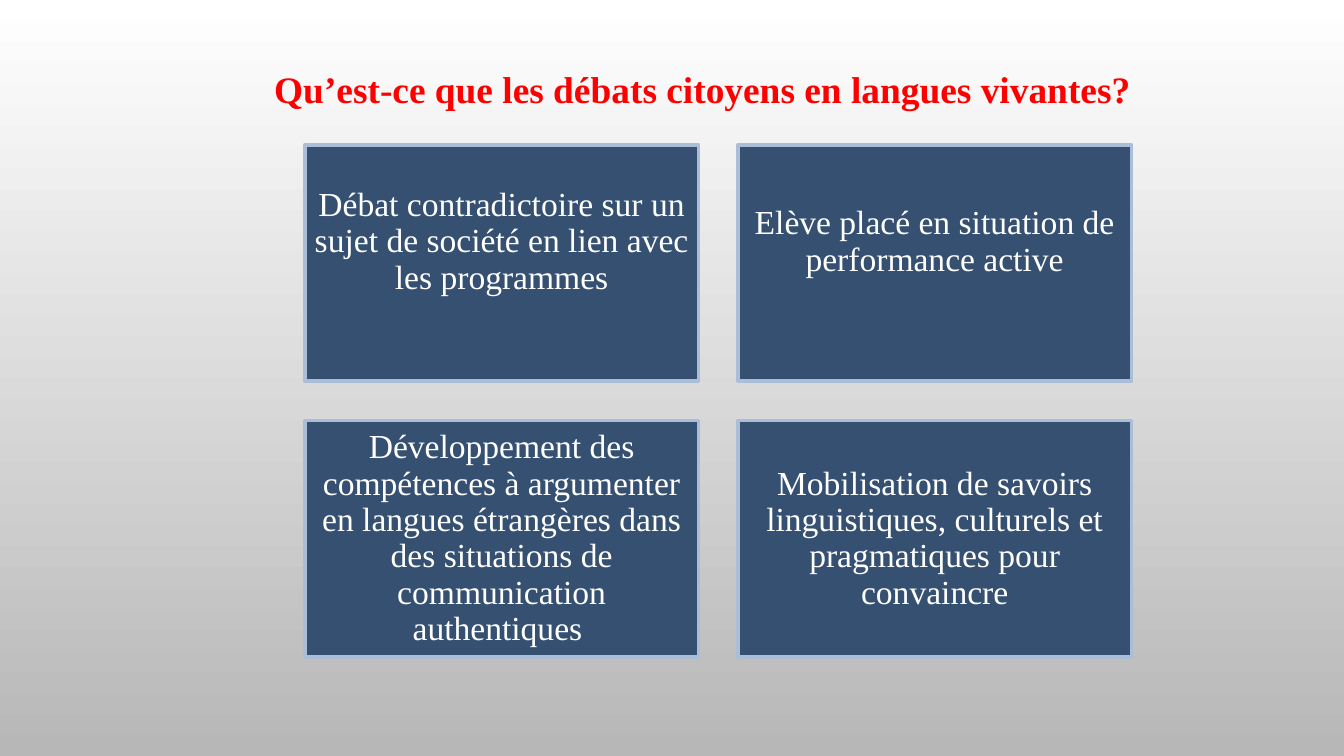
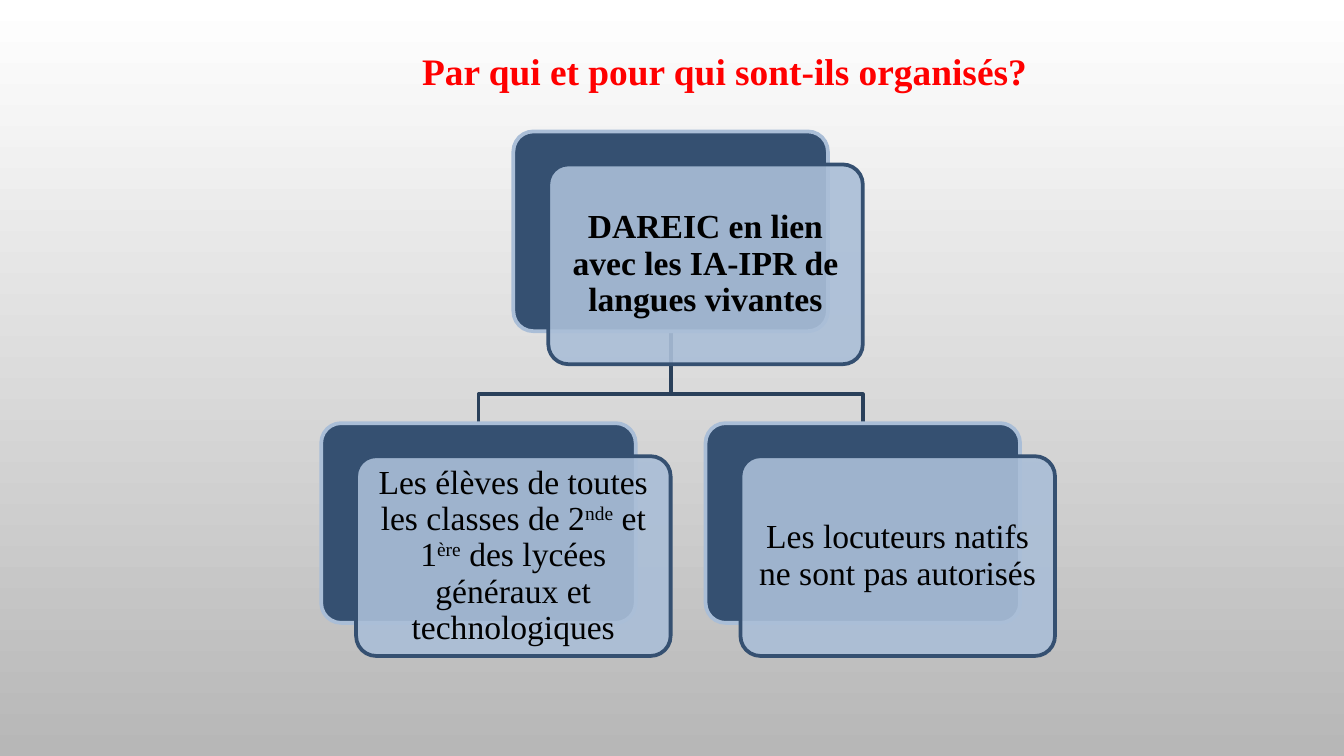
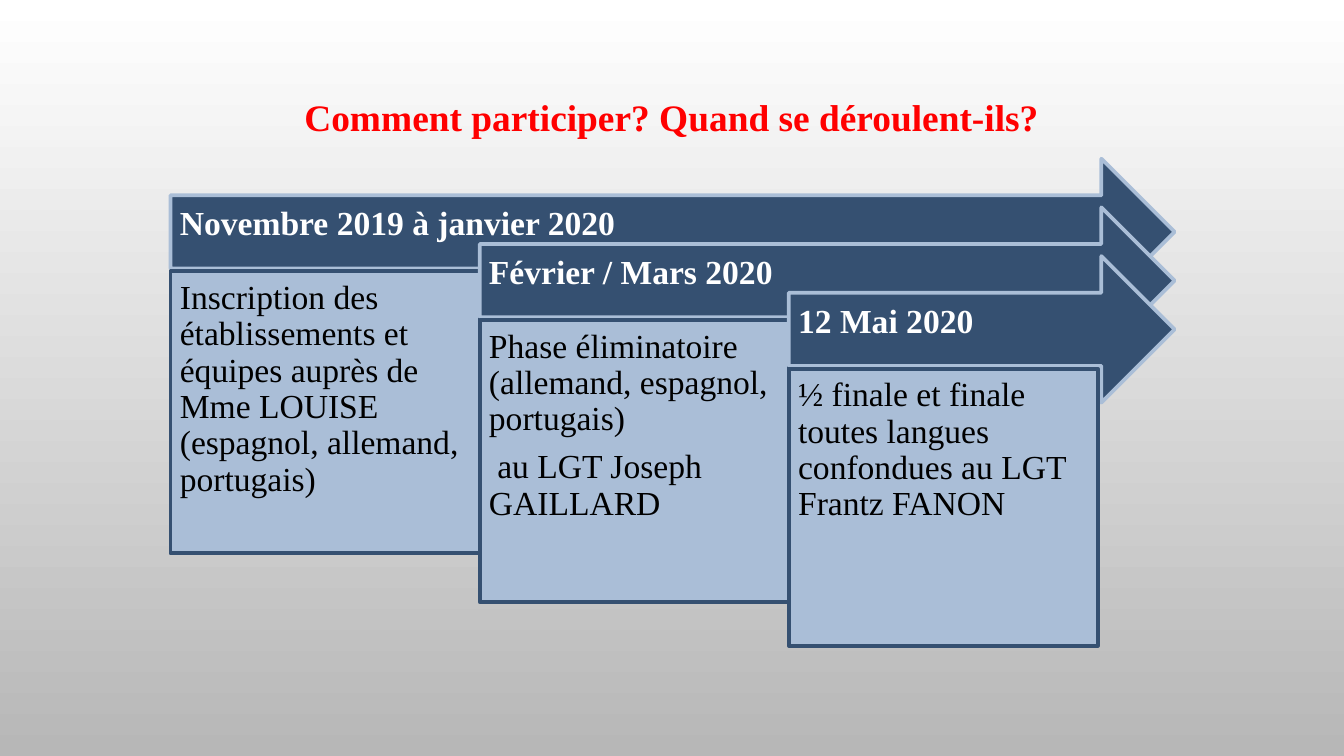
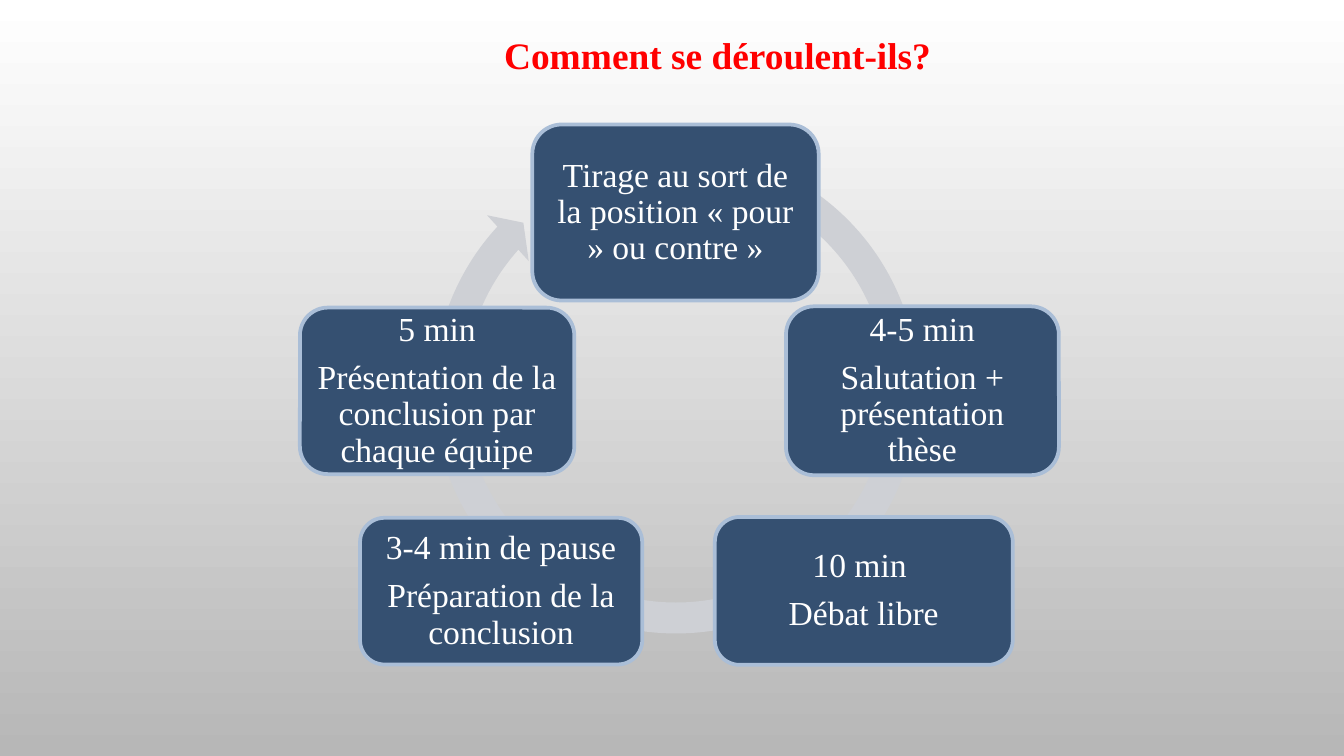
from dataclasses import dataclass

from lxml import etree
from pptx import Presentation
from pptx.dml.color import RGBColor
from pptx.enum import shapes as es, text as et
from pptx.oxml import ns
from pptx.util import Pt

KIND = es.MSO_SHAPE
ALIGN = et.PP_ALIGN
ANCHOR = et.MSO_ANCHOR


@dataclass(frozen=True)
class Theme:
    """Colours, font and sizes that all slides share."""
    font: str = "Times New Roman"
    head: int = 20
    body: int = 18
    gap: float = 6.3
    lead: float = 0.9
    pad: float = 5
    rule: float = 2
    red: str = "FF0000"
    navy: str = "355071"
    pale: str = "AABED7"
    dark: str = "2A405A"
    ring: str = "CED0D5"
    white: str = "FFFFFF"
    black: str = "000000"
    grey: str = "B7B7B7"


T = Theme()


def rgb(code):
    """Return the colour for a hex code."""
    return RGBColor.from_string(code)


def write(frame, *paras, size=T.body, color=T.white, bold=False,
          align=ALIGN.CENTER, anchor=ANCHOR.MIDDLE, lead=T.lead,
          pads=(T.pad,) * 4):
    """Fill a frame with paragraphs; text between carets is superscript."""
    frame.word_wrap = True
    frame.vertical_anchor = anchor
    (frame.margin_left, frame.margin_top,
     frame.margin_right, frame.margin_bottom) = map(Pt, pads)
    for i, words in enumerate(paras):
        para = frame.add_paragraph() if i else frame.paragraphs[0]
        para.alignment = align
        para.line_spacing = lead
        para.space_before = Pt(0)
        if i < len(paras) - 1:
            para.space_after = Pt(T.gap)
        for j, part in enumerate(words.split("^")):
            run = para.add_run()
            run.text = part
            font = run.font
            font.name, font.size, font.bold = T.font, Pt(size), bold
            font.color.rgb = rgb(color)
            if j % 2:
                run._r.get_or_add_rPr().set("baseline", "30000")


def draw(slide, kind, box, fill=T.navy, line=T.pale, adj=(), alpha=None):
    """Add a preset shape and return it."""
    shape = slide.shapes.add_shape(kind, *map(Pt, box))
    shape.shadow.inherit = False
    shape.fill.solid()
    shape.fill.fore_color.rgb = rgb(fill)
    if alpha:
        tint = shape._element.spPr.find(".//" + ns.qn("a:srgbClr"))
        etree.SubElement(tint, ns.qn("a:alpha")).set("val", str(alpha * 1000))
    if line:
        shape.line.color.rgb = rgb(line)
        shape.line.width = Pt(T.rule)
    else:
        shape.line.fill.background()
    for i, value in enumerate(adj):
        shape.adjustments[i] = value
    return shape


def start(deck, words, box, align=ALIGN.CENTER):
    """Add a slide with its red title."""
    slide = deck.slides.add_slide(deck.slide_layouts[5])
    title = slide.shapes.title
    title.left, title.top, title.width, title.height = map(Pt, box)
    write(title.text_frame, words, size=T.head, color=T.red, bold=True,
          align=align, anchor=ANCHOR.TOP, lead=1, pads=(7.2, 3.6, 7.2, 3.6))
    title.text_frame.auto_size = et.MSO_AUTO_SIZE.SHAPE_TO_FIT_TEXT
    return slide


def grid(slide, box, cells, gap=21.1):
    """Place four text tiles in two rows of two."""
    left, top, width, height = box
    wide, high = (width - gap) / 2, (height - gap) / 2
    for i, (words, low) in enumerate(cells):
        row, col = divmod(i, 2)
        tile = draw(slide, KIND.RECTANGLE,
                    (left + col * (wide + gap), top + row * (high + gap), wide, high))
        write(tile.text_frame, words, pads=(T.pad, T.pad, T.pad, low))


def node(slide, left, top, size, shift, words, bold):
    """Place a dark card with a pale text card over it."""
    draw(slide, KIND.ROUNDED_RECTANGLE, (left, top, *size), adj=[0.1])
    card = draw(slide, KIND.ROUNDED_RECTANGLE,
                (left + shift[0], top + shift[1], *size),
                fill=T.pale, line=T.navy, adj=[0.1], alpha=90)
    write(card.text_frame, words, color=T.black, bold=bold)


def elbow(slide, *points):
    """Draw an open bent line through the points."""
    spots = [(Pt(x), Pt(y)) for x, y in points]
    pen = slide.shapes.build_freeform(*spots[0])
    pen.add_line_segments(spots[1:], close=False)
    bend = pen.convert_to_shape()
    bend.shadow.inherit = False
    bend.fill.background()
    bend.line.color.rgb = rgb(T.dark)
    bend.line.width = Pt(T.rule)


def tree(slide, box, root, leaves):
    """Place one parent centred over two children, with bent links."""
    left, top, width, height = box
    size, shift = (168.5, 107), (18.7, 17.7)
    wide, high = size
    pitch = width - wide - shift[0]
    base = top + height - high - shift[1]
    mid = left + (pitch + wide) / 2
    spots = [left, left + pitch]
    for x in reversed(spots):
        end = x + wide / 2
        elbow(slide, (mid, top + high), (mid, base - 15.4),
              (end, base - 15.4), (end, base))
    node(slide, left + pitch / 2, top, size, shift, root, True)
    for x, words in zip(spots, leaves):
        node(slide, x, base, size, shift, words, False)


def steps(slide, box, stages):
    """Place stepped arrows that share a right edge, each over a card."""
    left, top, width, _ = box
    across, down = 165.6, 26.1
    for i, (date, tall, *notes) in enumerate(stages):
        x, y = left + i * across, top + i * down
        arrow = draw(slide, KIND.RIGHT_ARROW, (x, y, left + width - x, 78.5),
                     adj=[0.5, 0.5])
        write(arrow.text_frame, date, bold=True, align=ALIGN.LEFT,
              pads=(T.pad, T.pad, 20, 12.4))
        card = draw(slide, KIND.RECTANGLE, (x, y + 60.3, across, tall),
                    fill=T.pale, line=T.navy)
        write(card.text_frame, *notes, color=T.black, align=ALIGN.LEFT,
              anchor=ANCHOR.TOP)


def cycle(slide, box, cards):
    """Place the round arrow and the cards on it."""
    left, top, *_ = box
    draw(slide, KIND.CIRCULAR_ARROW, (left + 63.9, top + 5.2, 276.5, 276.5),
         fill=T.ring, line=None, adj=[0.06, 3.31, 133.36, 176.6, 0.06])
    for (x, y, *size), *words in cards:
        card = draw(slide, KIND.ROUNDED_RECTANGLE, (left + x, top + y, *size))
        write(card.text_frame, *words)


def main():
    """Build the four slides and save them."""
    deck = Presentation()
    deck.slide_width, deck.slide_height = Pt(720), Pt(405)
    back = deck.slide_master.background.fill
    back.gradient()
    back.gradient_angle = 270
    for stop, code in zip(back.gradient_stops, (T.white, T.grey)):
        stop.color.rgb = rgb(code)

    what = start(deck, "Qu’est-ce que les débats citoyens en langues vivantes?",
                 (139.7, 31.7, 478, 31.7), ALIGN.LEFT)
    grid(what, (163.4, 77.7, 442.8, 274.2), [
        ("Débat contradictoire sur un sujet de société en lien avec les programmes", 27.5),
        ("Elève placé en situation de performance active", 27.5),
        ("Développement des compétences à argumenter en langues étrangères "
         "dans des situations de communication authentiques ", T.pad),
        ("Mobilisation de savoirs linguistiques, culturels et pragmatiques "
         "pour convaincre", T.pad),
    ])

    who = start(deck, "Par qui et pour qui sont-ils organisés?",
                (218.9, 22.3, 344, 31.7), ALIGN.LEFT)
    tree(who, (172.1, 70.4, 393.1, 281),
         "DAREIC en lien avec les IA-IPR de langues vivantes",
         ["Les élèves de toutes les classes de 2^nde^ et 1^ère^ des lycées "
          "généraux et technologiques",
          "Les locuteurs natifs ne sont pas autorisés"])

    when = start(deck, "Comment participer? Quand se déroulent-ils?",
                 (140.4, 46.8, 439, 31.7))
    steps(when, (91.4, 85, 537.9, 261), [
        ("Novembre 2019 à janvier 2020", 151.2,
         "Inscription des établissements et équipes auprès de Mme LOUISE "
         "(espagnol, allemand, portugais)"),
        ("Février / Mars 2020", 151.2,
         "Phase éliminatoire (allemand, espagnol, portugais)",
         " au LGT Joseph GAILLARD"),
        ("12 Mai 2020", 148.5,
         "½ finale et finale toutes langues confondues au LGT Frantz FANON"),
    ])

    how = start(deck, "Comment se déroulent-ils?", (193, 13.7, 383, 31.7))
    cycle(how, (160, 66, 408, 290), [
        ((125.2, 0.7, 153.4, 94.3),
         "Tirage au sort de la position « pour » ou contre »"),
        ((261.1, 98.1, 146.2, 90.5), "4-5 min", "Salutation + présentation thèse"),
        ((223, 211, 159.6, 79.2), "10 min ", "Débat libre"),
        ((32.9, 211.4, 151.2, 78.6), "3-4 min de pause", "Préparation de la conclusion"),
        ((0.7, 98.8, 147, 89.2), "5 min",
         "Présentation de la conclusion par chaque équipe"),
    ])
    deck.save("out.pptx")


if __name__ == "__main__":
    main()
